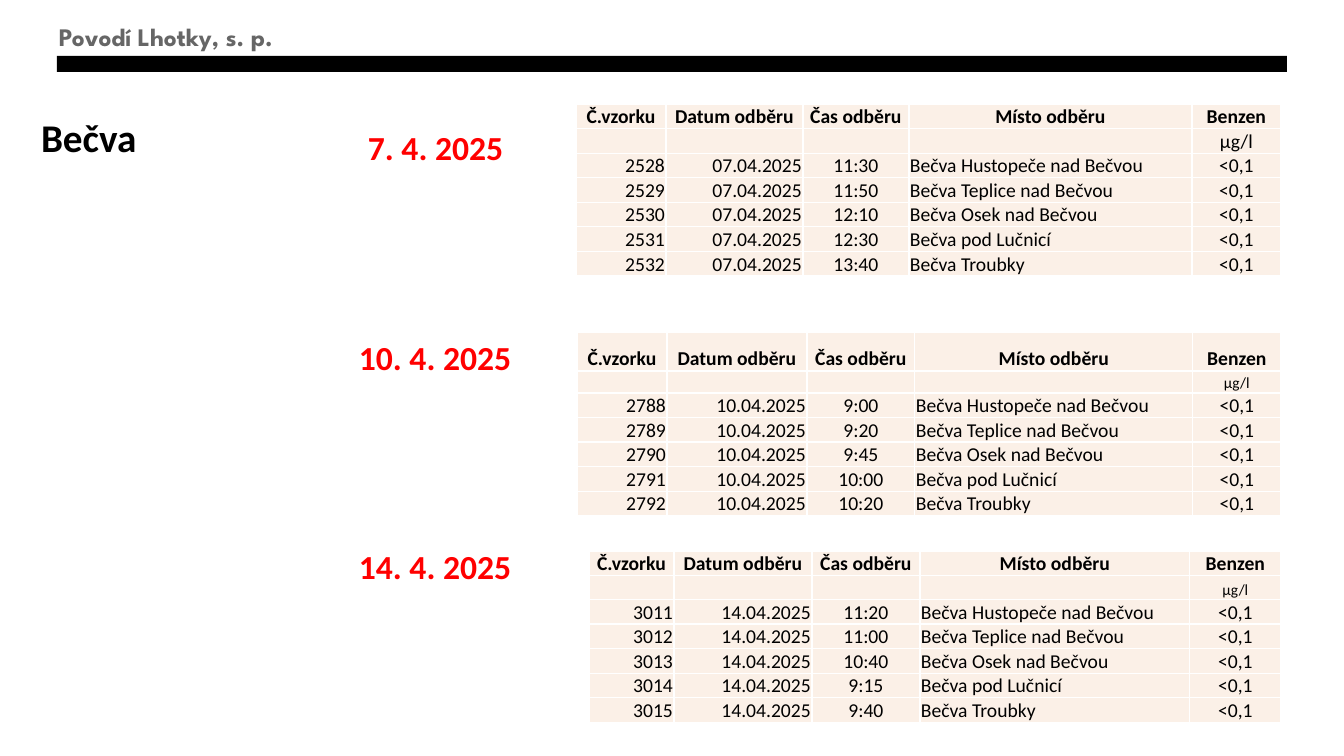
from dataclasses import dataclass

from lxml.etree import SubElement
from pptx import Presentation
from pptx.dml.color import RGBColor
from pptx.enum.shapes import MSO_SHAPE as Shape
from pptx.enum.text import MSO_ANCHOR as Anchor, MSO_AUTO_SIZE as Fit, PP_ALIGN as Align
from pptx.oxml.ns import qn
from pptx.util import Pt

SCALE = 12192000 / 1344  # EMU in one px
BLACK, WHITE, RED, GREY, CREAM = "000000", "FFFFFF", "FF0000", "666666", "FBF0E7"
HEADS = ["Č.vzorku", "Datum odběru", "Čas odběru", "Místo odběru", "Benzen"]
SITES = ["Bečva Hustopeče nad Bečvou", "Bečva Teplice nad Bečvou",
         "Bečva Osek nad Bečvou", "Bečva pod Lučnicí", "Bečva Troubky"]
SIDES = [Align.RIGHT, Align.RIGHT, Align.CENTER, Align.LEFT, Align.CENTER]
UNIT, LEVEL = "µg/l", "<0,1"


@dataclass
class Survey:
    date: str
    label: tuple[int, int]
    table: tuple[int, int]
    cols: list[int]
    rows: list[int]
    first: int
    times: list[str]
    small: int = 11  # size of the unit row


SURVEYS = [
    Survey("7. 4. 2025", (358, 122), (576, 104), [90, 137, 106, 283, 89],
           [24] * 7, 2528, ["11:30", "11:50", "12:10", "12:30", "13:40"], 14),
    Survey("10. 4. 2025", (349, 332), (577, 332), [90, 140, 108, 278, 88],
           [39, 22] + [24] * 5, 2788, ["9:00", "9:20", "9:45", "10:00", "10:20"]),
    Survey("14. 4. 2025", (349, 541), (589, 551), [85, 138, 108, 270, 91],
           [24] * 7, 3011, ["11:20", "11:00", "10:40", "9:15", "9:40"]),
]


def px(num: int) -> int:
    return round(num * SCALE)


def tint(code: str) -> RGBColor:
    return RGBColor.from_string(code)


def write(frame, text: str, *, size: int = 14, color: str = BLACK, bold: bool = False,
          face: str = "Calibri", align=Align.LEFT) -> None:
    para = frame.paragraphs[0]
    para.alignment = align
    if not text:  # keep an empty cell as low as its row
        SubElement(para._p, qn("a:endParaRPr"), sz=str(size * 100))
        return
    run = para.add_run()
    run.text = text
    font = run.font
    font.size, font.bold, font.name = Pt(size), bold, face
    font.color.rgb = tint(color)


def label(slide, text: str, box: tuple[int, int, int, int], **style) -> None:
    frame = slide.shapes.add_textbox(*map(px, box)).text_frame
    frame.word_wrap = True
    frame.auto_size = Fit.SHAPE_TO_FIT_TEXT
    write(frame, text, **style)


def style_cell(cell) -> None:
    cell.margin_left = cell.margin_right = cell.margin_top = px(1)
    cell.margin_bottom = 0
    cell.vertical_anchor = Anchor.BOTTOM
    props = cell._tc.get_or_add_tcPr()
    for side in ("lnL", "lnR", "lnT", "lnB"):
        line = SubElement(props, qn(f"a:{side}"), w=str(Pt(1)))
        SubElement(SubElement(line, qn("a:solidFill")), qn("a:srgbClr"), val=WHITE)
    cell.fill.solid()
    cell.fill.fore_color.rgb = tint(CREAM)


def draw_table(slide, item: Survey) -> None:
    day = ".".join(part.zfill(2) for part in item.date.split(". "))
    data = [HEADS, [""] * 4 + [UNIT]]
    data += [[str(item.first + i), day, time, site, LEVEL]
             for i, (time, site) in enumerate(zip(item.times, SITES))]
    box = (*item.table, sum(item.cols), sum(item.rows))
    table = slide.shapes.add_table(len(data), len(HEADS), *map(px, box)).table
    table.first_row = table.horz_banding = False
    for col, width in zip(table.columns, item.cols):
        col.width = px(width)
    for r, (row, high) in enumerate(zip(data, item.rows)):
        table.rows[r].height = px(high)
        for c, text in enumerate(row):
            cell = table.cell(r, c)
            style_cell(cell)
            write(cell.text_frame, text, bold=r == 0, size=item.small if r == 1 else 14,
                  align=SIDES[c] if r > 1 else Align.CENTER)


def main() -> None:
    deck = Presentation()
    deck.slide_width, deck.slide_height = px(1344), px(756)
    slide = deck.slides.add_slide(deck.slide_layouts[5])

    # Header band
    bar = slide.shapes.add_shape(Shape.RECTANGLE, *map(px, (57, 56, 1230, 16)))
    bar.shadow.inherit = False
    bar.fill.solid()
    bar.fill.fore_color.rgb = tint(BLACK)
    bar.line.fill.background()
    label(slide, "Povodí Lhotky, s. p.", (49, 16, 672, 40),
          size=18, color=GREY, bold=True, face="League Spartan")

    # Title
    title = slide.shapes.title
    title.left, title.top, title.width, title.height = map(px, (31, 108, 451, 161))
    frame = title.text_frame
    frame.auto_size = Fit.NONE
    frame.vertical_anchor = Anchor.TOP
    write(frame, "Bečva", size=28, bold=True)

    # Dated tables
    for item in SURVEYS:
        draw_table(slide, item)
        label(slide, item.date, (*item.label, 672, 50), size=24, color=RED, bold=True)

    deck.save("out.pptx")


if __name__ == "__main__":
    main()
